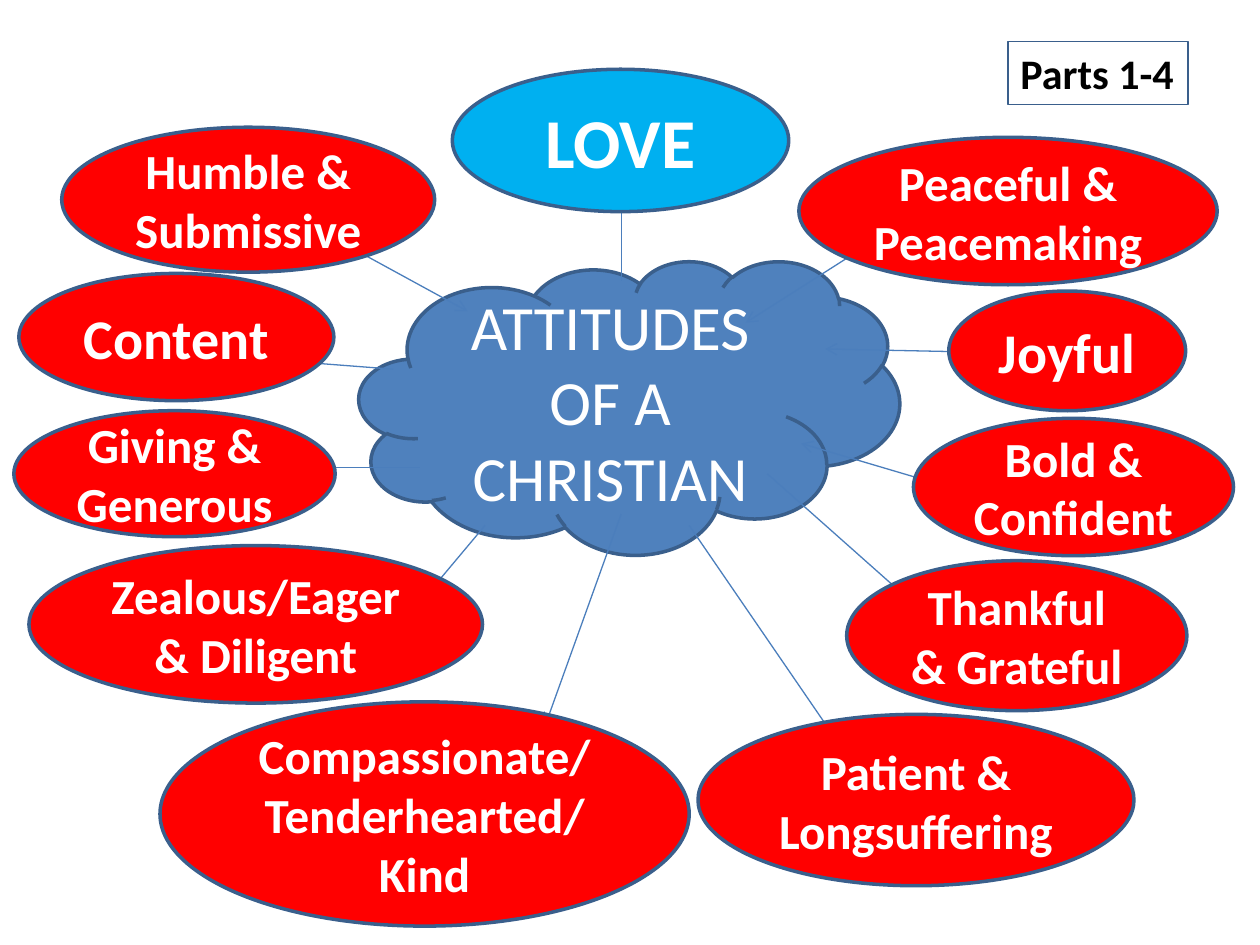
from dataclasses import dataclass

from lxml.etree import SubElement
from pptx import Presentation
from pptx.dml.color import RGBColor
from pptx.enum.shapes import MSO_CONNECTOR, MSO_SHAPE
from pptx.enum.text import MSO_ANCHOR, MSO_AUTO_SIZE, PP_ALIGN
from pptx.oxml.ns import qn
from pptx.util import Inches, Pt

WHITE = RGBColor(0xFF, 0xFF, 0xFF)
BLACK = RGBColor(0x00, 0x00, 0x00)
RED = RGBColor(0xFF, 0x00, 0x00)
SKY = RGBColor(0x00, 0xB0, 0xF0)
BLUE = RGBColor(0x4F, 0x81, 0xBD)
EDGE = RGBColor(0x3A, 0x5F, 0x8C)
RAY = RGBColor(0x4B, 0x7E, 0xBC)


@dataclass
class Bubble:
    text: str
    box: tuple[float, float, float, float]
    size: int = 28
    fill: RGBColor = RED
    bold: bool = True
    kind: MSO_SHAPE = MSO_SHAPE.OVAL


@dataclass
class Ray:
    start: tuple[float, float]
    end: tuple[float, float]


# Center and the traits around it
CLOUD = Bubble("ATTITUDES OF A CHRISTIAN", (2.85, 2.07, 4.29, 2.33),
               36, BLUE, False, MSO_SHAPE.CLOUD)
TRAITS = [
    Bubble("Humble & Submissive", (0.49, 1.01, 2.96, 1.15)),
    Bubble("Zealous/Eager & Diligent", (0.23, 4.33, 3.6, 1.25)),
    Bubble("Joyful", (7.53, 2.31, 1.88, 0.95), 32),
    Bubble("Thankful & Grateful", (6.72, 4.45, 2.7, 1.19)),
    Bubble("Content", (0.15, 2.17, 2.5, 1.01), 32),
    Bubble("Giving & Generous", (0.11, 3.26, 2.55, 1)),
    Bubble("Patient & Longsuffering ", (5.54, 5.67, 3.46, 1.36)),
    Bubble("Compassionate/Tenderhearted/\nKind", (1.27, 5.57, 4.2, 1.78)),
    Bubble("Bold & Confident", (7.25, 3.32, 2.54, 1.09)),
    Bubble("Peaceful & Peacemaking", (6.34, 1.09, 3.32, 1.17)),
    Bubble("LOVE", (3.59, 0.55, 2.67, 1.13), 40, SKY),
]
RAYS = [
    Ray((2.63, 1.88), (3.71, 2.47)),
    Ray((3.85, 4.17), (3.33, 4.79)),
    Ray((7.53, 2.79), (6.55, 2.77)),
    Ray((6.09, 3.76), (7.25, 4.79)),
    Ray((3.12, 2.93), (2.21, 2.86)),
    Ray((3.33, 3.71), (2.51, 3.71)),
    Ray((5.47, 4.17), (6.67, 5.92)),
    Ray((6.83, 1.98), (5.92, 2.56)),
    Ray((7.51, 3.86), (6.36, 3.52)),
    Ray((4.93, 4.08), (4.33, 5.75)),
    Ray((4.93, 2.23), (4.93, 1.42)),
]


def style(shape, text: str, size: int, ink: RGBColor, bold: bool,
          align: PP_ALIGN, width: float) -> None:
    """Write the text and set its font and the outline."""
    shape.line.color.rgb = EDGE
    shape.line.width = Pt(width)
    shape.text_frame.text = text
    look = {"name": "Calibri", "size": Pt(size), "bold": bold}
    for para in shape.text_frame.paragraphs:
        para.alignment = align
        for run in para.runs:
            for key, value in look.items():
                setattr(run.font, key, value)
            run.font.color.rgb = ink


def draw_bubble(slide, item: Bubble) -> None:
    shape = slide.shapes.add_shape(item.kind, *map(Inches, item.box))
    shape.shadow.inherit = False
    shape.fill.solid()
    shape.fill.fore_color.rgb = item.fill
    style(shape, item.text, item.size, WHITE, item.bold, PP_ALIGN.CENTER, 2)
    shape.text_frame.word_wrap = True
    shape.text_frame.vertical_anchor = MSO_ANCHOR.MIDDLE


def draw_ray(slide, ray: Ray) -> None:
    line = slide.shapes.add_connector(
        MSO_CONNECTOR.STRAIGHT, *map(Inches, ray.start + ray.end))
    line.line.color.rgb = RAY
    line.line.width = Pt(0.75)
    SubElement(line.line._get_or_add_ln(), qn("a:tailEnd"), type="arrow")
    SubElement(line._element.spPr, qn("a:effectLst"))


def draw_label(slide, text: str) -> None:
    label = slide.shapes.add_textbox(*map(Inches, (8, 0.33, 1.43, 0.5)))
    style(label, text, 24, BLACK, True, PP_ALIGN.LEFT, 0.75)
    label.text_frame.word_wrap = False
    label.text_frame.auto_size = MSO_AUTO_SIZE.SHAPE_TO_FIT_TEXT


def main() -> None:
    deck = Presentation()
    deck.slide_width, deck.slide_height = Inches(10), Inches(7.5)
    slide = deck.slides.add_slide(deck.slide_layouts[6])

    # Rays lie over the cloud and under the traits
    draw_bubble(slide, CLOUD)
    for ray in RAYS:
        draw_ray(slide, ray)
    for trait in TRAITS:
        draw_bubble(slide, trait)

    # Corner label
    draw_label(slide, "Parts 1-4")
    deck.save("out.pptx")


if __name__ == "__main__":
    main()
